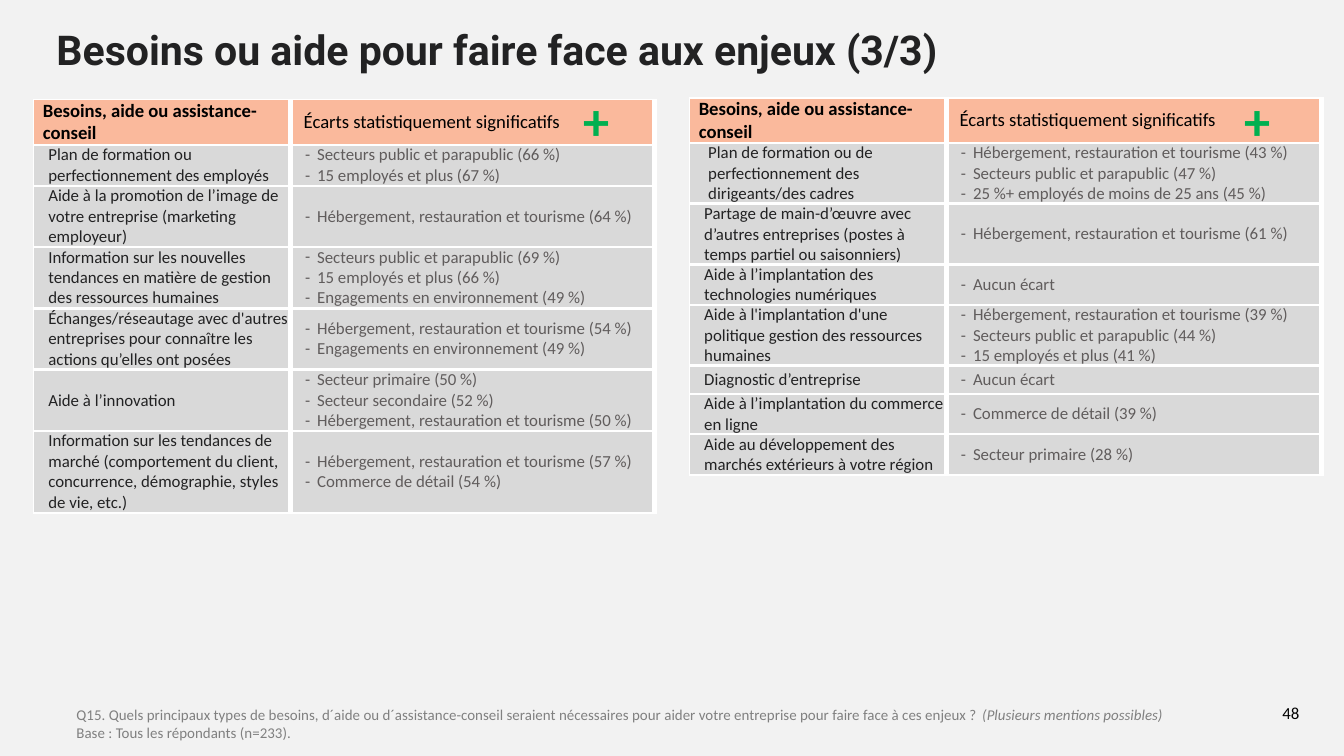
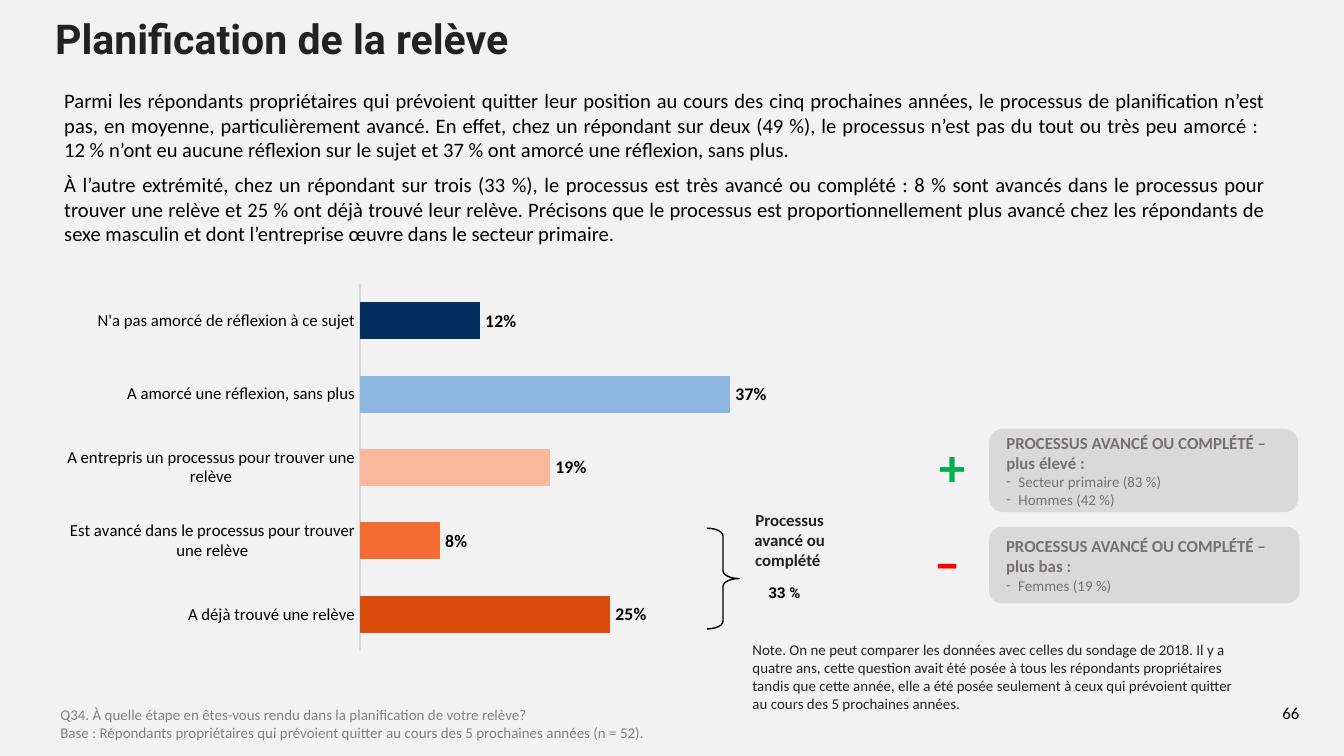
from typing import NamedTuple

from lxml.etree import SubElement
from pptx import Presentation
from pptx.chart.data import CategoryChartData
from pptx.dml.color import RGBColor
from pptx.enum.chart import XL_CHART_TYPE as ChartType
from pptx.enum.chart import XL_LABEL_POSITION as LabelPosition
from pptx.enum.chart import XL_TICK_MARK as TickMark
from pptx.enum.shapes import MSO_SHAPE as Preset
from pptx.enum.text import MSO_ANCHOR as Anchor
from pptx.enum.text import MSO_AUTO_SIZE as AutoSize
from pptx.enum.text import PP_ALIGN as Align
from pptx.oxml.ns import qn
from pptx.util import Emu, Pt

PX = 9144

BACKGROUND = RGBColor(0xF2, 0xF2, 0xF2)
BLACK = RGBColor(0, 0, 0)
WHITE = RGBColor(0xFF, 0xFF, 0xFF)
INK = RGBColor(0x22, 0x22, 0x23)
BROWN_GREY = RGBColor(0x60, 0x5C, 0x5C)
WARM_GREY = RGBColor(0x76, 0x71, 0x71)
FOOT_GREY = RGBColor(0x80, 0x80, 0x80)
PANEL = RGBColor(0xD9, 0xD9, 0xD9)
GREEN = RGBColor(0x00, 0xB0, 0x50)
RED = RGBColor(0xFF, 0, 0)
NAVY = RGBColor(0x00, 0x2F, 0x5F)
SKY = RGBColor(0x8D, 0xB7, 0xE1)
PEACH = RGBColor(0xFA, 0xB9, 0x9C)
ORANGE = RGBColor(0xF4, 0x6C, 0x31)
RUST = RGBColor(0xDA, 0x4C, 0x0C)


class Box(NamedTuple):
    left: int
    top: int
    width: int
    height: int

    def emu(self) -> list[Emu]:
        return [px(length) for length in self]


class Style(NamedTuple):
    size: float
    color: RGBColor
    bold: bool = False
    face: str = "Calibri"


class Need(NamedTuple):
    label: str
    gaps: list[str]
    height: int = 21
    inset: tuple[int, int, int, int] = (1, 0, 1, 0)


class NeedTable(NamedTuple):
    box: Box
    gap_width: int
    plus: Box
    needs: list[Need]


class Callout(NamedTuple):
    box: Box
    heading: str
    groups: list[str]
    sign: str
    sign_color: RGBColor
    sign_box: Box


class Stage(NamedTuple):
    label: str
    share: float
    color: RGBColor


TITLE = Style(22, INK, True, "Roboto")
FOOT = Style(8, FOOT_GREY)
PAGE_NUMBER = Style(9, BLACK)
HEADER_LABEL = Style(10, BLACK, True)
HEADER_GAPS = Style(10, BLACK)
NEED_LABEL = Style(9, INK)
NEED_GAP = Style(9, BROWN_GREY)
PAGE_BOX = Box(935, 513, 51, 30)
LABEL_WIDTH = 191
HEADER_HEIGHT = 20

NEED_TABLES = [
    NeedTable(Box(25, 74, 462, 309), 271, Box(394, 61, 99, 57), [
        Need("Plan de formation ou perfectionnement des employés",
             ["Secteurs public et parapublic (66 %)", "15 employés et plus (67 %)"], 8),
        Need("Aide à la promotion de l’image de votre entreprise (marketing employeur)",
             ["Hébergement, restauration et tourisme (64 %)"], 17),
        Need("Information sur les nouvelles tendances en matière de gestion des ressources humaines",
             ["Secteurs public et parapublic (69 %)", "15 employés et plus (66 %)",
              "Engagements en environnement (49 %)"]),
        Need("Échanges/réseautage avec d'autres entreprises pour connaître les actions qu’elles ont posées",
             ["Hébergement, restauration et tourisme (54 %)", "Engagements en environnement (49 %)"]),
        Need("Aide à l’innovation",
             ["Secteur primaire (50 %)", "Secteur secondaire (52 %)",
              "Hébergement, restauration et tourisme (50 %)"]),
        Need("Information sur les tendances de marché (comportement du client, concurrence, "
             "démographie, styles de vie, etc.)",
             ["Hébergement, restauration et tourisme (57 %)", "Commerce de détail (54 %)"]),
    ]),
    NeedTable(Box(513, 73, 469, 284), 279, Box(886, 61, 99, 57), [
        Need("Plan de formation ou de perfectionnement des dirigeants/des cadres",
             ["Hébergement, restauration et tourisme (43 %)", "Secteurs public et parapublic (47 %)",
              "25 %+ employés de moins de 25 ans (45 %)"], 17, (4, 0, 4, 0)),
        Need("Partage de main-d’œuvre avec d’autres entreprises (postes à temps partiel ou saisonniers)",
             ["Hébergement, restauration et tourisme (61 %)"], 17),
        Need("Aide à l’implantation des technologies numériques", ["Aucun écart"], 17),
        Need("Aide à l'implantation d'une politique gestion des ressources humaines",
             ["Hébergement, restauration et tourisme (39 %)", "Secteurs public et parapublic (44 %)",
              "15 employés et plus (41 %)"]),
        Need("Diagnostic d’entreprise", ["Aucun écart"]),
        Need("Aide à l’implantation du commerce en ligne", ["Commerce de détail (39 %)"]),
        Need("Aide au développement des marchés extérieurs à votre région", ["Secteur primaire (28 %)"]),
    ]),
]

STAGES = [
    Stage("N'a pas amorcé de réflexion à ce sujet", 0.12, NAVY),
    Stage("A amorcé une réflexion, sans plus", 0.37, SKY),
    Stage("A entrepris un processus pour trouver une relève", 0.19, PEACH),
    Stage("Est avancé dans le processus pour trouver une relève", 0.08, ORANGE),
    Stage("A déjà trouvé une relève", 0.25, RUST),
]

CALLOUTS = [
    Callout(Box(736, 319, 230, 62), "PROCESSUS AVANCÉ OU COMPLÉTÉ – plus élevé :",
            ["Secteur primaire (83 %)", "Hommes (42 %)"], "+", GREEN, Box(653, 318, 112, 57)),
    Callout(Box(736, 392, 231, 57), "PROCESSUS AVANCÉ OU COMPLÉTÉ – plus bas :",
            ["Femmes (19 %)"], "– ", RED, Box(653, 389, 112, 57)),
]

FINDINGS = [
    "Parmi les répondants propriétaires qui prévoient quitter leur position au cours des cinq "
    "prochaines années, le processus de planification n’est pas, en moyenne, particulièrement "
    "avancé. En effet, chez un répondant sur deux (49 %), le processus n’est pas du tout ou très "
    "peu amorcé : \n12 % n’ont eu aucune réflexion sur le sujet et 37 % ont amorcé une réflexion, "
    "sans plus.",
    "À l’autre extrémité, chez un répondant sur trois (33 %), le processus est très avancé ou "
    "complété : 8 % sont avancés dans le processus pour trouver une relève et 25 % ont déjà trouvé "
    "leur relève. Précisons que le processus est proportionnellement plus avancé chez les "
    "répondants de sexe masculin et dont l’entreprise œuvre dans le secteur primaire.",
]


def px(length: int) -> Emu:
    return Emu(length * PX)


def style_font(font, style: Style) -> None:
    font.name, font.size, font.bold = style.face, Pt(style.size), style.bold
    font.color.rgb = style.color


def indent(paragraph, left: int, hang: int, face: str) -> None:
    properties = paragraph._p.get_or_add_pPr()
    properties.set("marL", str(px(left)))
    properties.set("indent", str(px(-hang)))
    if hang:
        SubElement(properties, qn("a:buFont"), typeface=face)
        SubElement(properties, qn("a:buChar"), char="-")


def write(frame, texts: list[str], style: Style, left: int = 0, hang: int = 0,
          append: bool = False) -> list:
    written = []
    for index, text in enumerate(texts):
        paragraph = frame.add_paragraph() if append or index else frame.paragraphs[0]
        paragraph.text = text
        if left:
            indent(paragraph, left, hang, style.face)
        style_font(paragraph.font, style)
        written.append(paragraph)
    return written


def add_text(slide, box: Box, texts: list[str], style: Style, align=Align.LEFT, anchor=Anchor.TOP,
             grow: bool = True, inset: tuple[int, int] = (10, 5)) -> list:
    frame = slide.shapes.add_textbox(*box.emu()).text_frame
    frame.word_wrap = True
    frame.auto_size = AutoSize.SHAPE_TO_FIT_TEXT if grow else AutoSize.NONE
    frame.vertical_anchor = anchor
    frame.margin_left = frame.margin_right = px(inset[0])
    frame.margin_top = frame.margin_bottom = px(inset[1])
    paragraphs = write(frame, texts, style)
    for paragraph in paragraphs:
        paragraph.alignment = align
    return paragraphs


def start_slide(deck, title: str, title_box: Box, number: str):
    slide = deck.slides.add_slide(deck.slide_layouts[6])
    slide.background.fill.solid()
    slide.background.fill.fore_color.rgb = BACKGROUND
    add_text(slide, PAGE_BOX, [number], PAGE_NUMBER, Align.CENTER, Anchor.BOTTOM, False)
    heading, = add_text(slide, title_box, [title], TITLE, anchor=Anchor.MIDDLE, grow=False, inset=(7, 4))
    heading.line_spacing = 0.9
    return slide


def add_sign(slide, box: Box, sign: str, color: RGBColor) -> None:
    add_text(slide, box, [sign], Style(28, color, True), Align.CENTER)


def fill_cell(cell, color: RGBColor, inset: tuple[int, int, int, int], borders: dict[str, float]) -> None:
    cell.vertical_anchor = Anchor.MIDDLE
    cell.margin_left, cell.margin_top, cell.margin_right, cell.margin_bottom = map(px, inset)
    properties = cell._tc.get_or_add_tcPr()
    for side, points in borders.items():
        line = SubElement(properties, qn(f"a:ln{side}"), w=str(Pt(points)))
        SubElement(SubElement(line, qn("a:solidFill")), qn("a:srgbClr"), val=str(WHITE))
    cell.fill.solid()
    cell.fill.fore_color.rgb = color


def add_need_table(slide, spec: NeedTable) -> None:
    holder = slide.shapes.add_table(len(spec.needs) + 1, 2, *spec.box.emu())
    table = holder.table
    table.first_row = table.horz_banding = False
    for column, width in zip(table.columns, (LABEL_WIDTH, spec.gap_width)):
        column.width = px(width)
    for row, height in zip(table.rows, [HEADER_HEIGHT] + [need.height for need in spec.needs]):
        row.height = px(height)
    holder.height = px(spec.box.height)

    headers = Need("Besoins, aide ou assistance-conseil", [], inset=(7, 0, 7, 0))
    for index, need in enumerate([headers] + spec.needs):
        is_header = index == 0
        for column in range(2):
            borders = {"L": 3 if column else 0.75, "R": 3, "T": 0.75 if is_header else 1.5, "B": 1.5}
            fill_cell(table.cell(index, column), PEACH if is_header else PANEL,
                      (1, 0, 1, 0) if column else need.inset, borders)
        label, gaps = (table.cell(index, column).text_frame for column in range(2))
        if is_header:
            write(label, [need.label], HEADER_LABEL)
            write(gaps, ["Écarts statistiquement significatifs"], HEADER_GAPS, 9)
        else:
            write(label, [need.label], NEED_LABEL, 10)
            write(gaps, need.gaps, NEED_GAP, 19, 9)
    add_sign(slide, spec.plus, "+", GREEN)


def add_stage_chart(slide, box: Box) -> None:
    data = CategoryChartData(number_format="0%")
    data.categories = [stage.label for stage in STAGES]
    data.add_series("Series 1", [stage.share for stage in STAGES])
    chart = slide.shapes.add_chart(ChartType.BAR_CLUSTERED, *box.emu(), data).chart
    chart.has_legend = chart.has_title = False
    style_font(chart.font, Style(10, BLACK))

    categories = chart.category_axis
    categories.reverse_order = True
    categories.major_tick_mark = categories.minor_tick_mark = TickMark.NONE
    categories.format.line.color.rgb = PANEL
    categories.format.line.width = Pt(0.75)
    style_font(categories.tick_labels.font, Style(9, BLACK))

    shares = chart.value_axis
    shares.visible = shares.has_major_gridlines = False
    shares.minimum_scale, shares.maximum_scale = 0, 0.45

    plot = chart.plots[0]
    plot.gap_width = 98
    plot.vary_by_categories = False
    series = plot.series[0]
    series.format.fill.solid()
    series.format.fill.fore_color.rgb = SKY
    for index, stage in enumerate(STAGES):
        fill = series.points[index].format.fill
        fill.solid()
        fill.fore_color.rgb = stage.color
    labels = series.data_labels
    labels.show_value = True
    labels.position = LabelPosition.OUTSIDE_END
    labels.number_format, labels.number_format_is_linked = "0%", False
    style_font(labels.font, Style(9.5, BLACK, True))

    area = chart._chartSpace.chart.plotArea
    for old in area.findall(qn("c:layout")):
        area.remove(old)
    layout = SubElement(area, qn("c:layout"))
    area.insert(0, layout)
    manual = SubElement(layout, qn("c:manualLayout"))
    for tag, value in (("layoutTarget", "inner"), ("xMode", "edge"), ("yMode", "edge"),
                       ("x", "0.39"), ("y", "0"), ("w", "0.61"), ("h", "1")):
        SubElement(manual, qn(f"c:{tag}"), val=value)


def add_callout(slide, callout: Callout) -> None:
    panel = slide.shapes.add_shape(Preset.ROUNDED_RECTANGLE, *callout.box.emu())
    panel.shadow.inherit = False
    panel.fill.solid()
    panel.fill.fore_color.rgb = PANEL
    panel.line.fill.background()
    frame = panel.text_frame
    frame.word_wrap = True
    frame.vertical_anchor = Anchor.MIDDLE
    lines = write(frame, [callout.heading], Style(9, WARM_GREY, True))
    lines += write(frame, callout.groups, Style(8, WARM_GREY), 9, 9, append=True)
    for line in lines:
        line.alignment = Align.LEFT
    add_sign(slide, callout.sign_box, callout.sign, callout.sign_color)


def build_needs(deck) -> None:
    slide = start_slide(deck, "Besoins ou aide pour faire face aux enjeux (3/3)", Box(35, 16, 938, 46), "48")
    for spec in NEED_TABLES:
        add_need_table(slide, spec)
    question, _ = add_text(slide, Box(47, 520, 871, 37), [
        "Q15. Quels principaux types de besoins, d´aide ou d´assistance-conseil seraient nécessaires "
        "pour aider votre entreprise pour faire face à ces enjeux ? ",
        "Base : Tous les répondants (n=233)."], FOOT)
    mention = question.add_run()
    mention.text = "(Plusieurs mentions possibles)"
    mention.font.italic = True


def build_succession(deck) -> None:
    slide = start_slide(deck, "Planification de la relève", Box(34, 13, 938, 36), "66")
    add_stage_chart(slide, Box(50, 211, 553, 274))
    for finding in add_text(slide, Box(38, 66, 914, 118), FINDINGS, Style(11, BLACK), Align.JUSTIFY,
                            inset=(10, 0)):
        finding.line_spacing = Pt(13)
        finding.space_after = Pt(6)
    add_text(slide, Box(35, 520, 839, 37), [
        "Q34. À quelle étape en êtes-vous rendu dans la planification de votre relève?",
        "Base : Répondants propriétaires qui prévoient quitter au cours des 5 prochaines années (n = 52)."],
        FOOT)
    add_text(slide, Box(550, 472, 385, 64), [
        "Note. On ne peut comparer les données avec celles du sondage de 2018. Il y a quatre ans, cette "
        "question avait été posée à tous les répondants propriétaires tandis que cette année, elle a été "
        "posée seulement à ceux qui prévoient quitter au cours des 5 prochaines années."], Style(8, INK))
    total, = add_text(slide, Box(562, 427, 64, 25), ["33 %"], Style(8, BLACK, True, "Roboto"))
    total.line_spacing = 1.2
    brace = slide.shapes.add_shape(Preset.RIGHT_BRACE, *Box(526, 393, 24, 75).emu())
    brace.shadow.inherit = False
    brace.fill.background()
    brace.line.color.rgb = BLACK
    brace.line.width = Pt(0.75)
    brace.adjustments[0] = 0.24
    add_text(slide, Box(537, 374, 101, 56), ["Processus avancé ou complété "], Style(9, INK, True), Align.CENTER)
    for callout in CALLOUTS:
        add_callout(slide, callout)


def main() -> None:
    deck = Presentation()
    deck.slide_width = px(1000)
    deck.slide_height = Emu(deck.slide_width * 9 // 16)
    build_needs(deck)
    build_succession(deck)
    deck.save("out.pptx")


if __name__ == "__main__":
    main()
